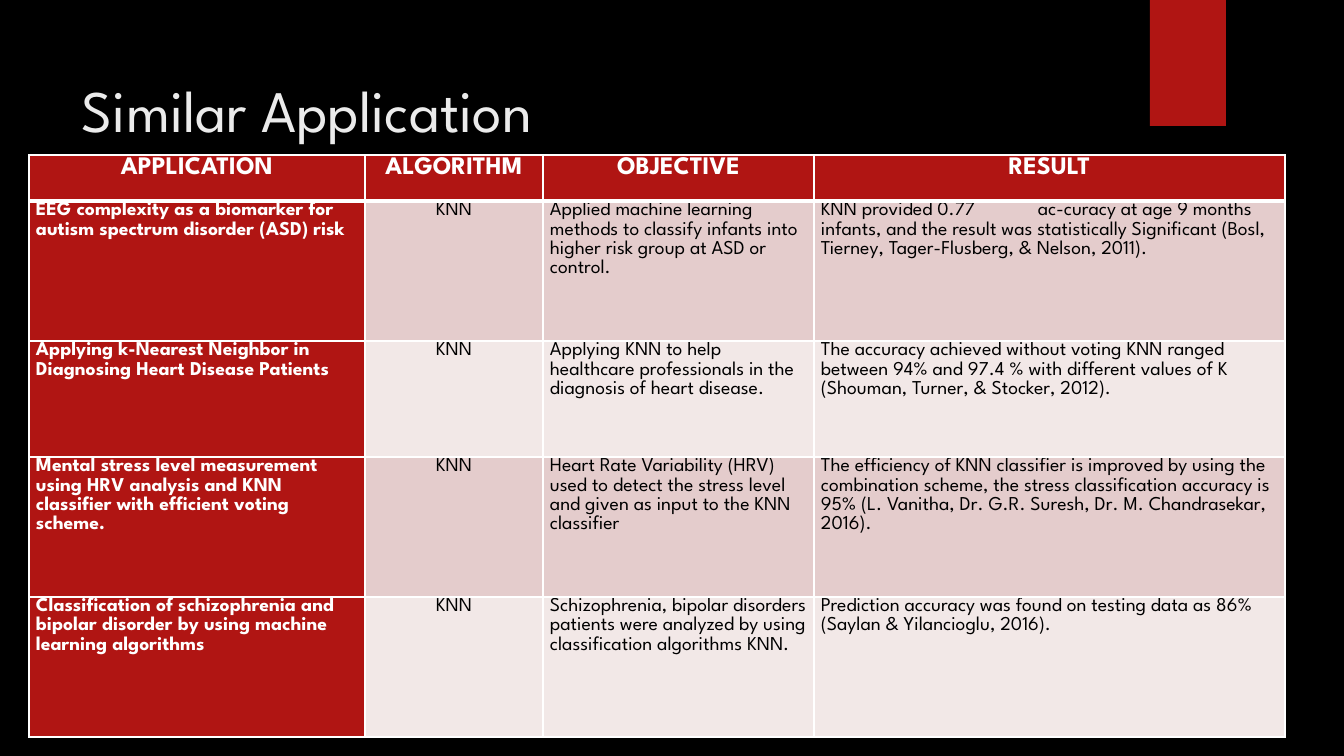
from lxml import etree
from pptx import Presentation
from pptx import util as u
from pptx.dml.color import RGBColor
from pptx.enum import shapes, text
from pptx.oxml import ns

PX = 914400 / 100.8
FONT = "League Spartan"
BLACK = RGBColor(0x00, 0x00, 0x00)
WHITE = RGBColor(0xFF, 0xFF, 0xFF)
RED = RGBColor(0xB0, 0x15, 0x13)
TITLE_GRAY = RGBColor(0xEB, 0xEB, 0xEB)
BAND_DARK = RGBColor(0xE4, 0xCC, 0xCC)
BAND_LIGHT = RGBColor(0xF2, 0xE8, 0xE7)

COLUMN_WIDTHS = [336, 178, 271, 471]
ROW_HEIGHTS = [46, 140, 116, 140, 140]
ROWS = [
    ["APPLICATION", "ALGORITHM", "OBJECTIVE", "RESULT"],
    ["EEG complexity as a biomarker for autism spectrum disorder (ASD) risk",
     "KNN",
     "Applied machine learning methods to classify infants into higher risk group at ASD or control.",
     "KNN provided 0.77\tac-curacy at age 9 months infants, and the result was statistically "
     "Significant (Bosl, Tierney, Tager-Flusberg, & Nelson, 2011)."],
    ["Applying k-Nearest Neighbor in Diagnosing Heart Disease Patients",
     "KNN",
     "Applying KNN to help healthcare professionals in the diagnosis of heart disease.",
     "The accuracy achieved without voting KNN ranged between 94% and 97.4 % with different "
     "values of K (Shouman, Turner, & Stocker, 2012)."],
    ["Mental stress level measurement using HRV analysis and KNN classifier with efficient voting scheme.",
     "KNN",
     "Heart Rate Variability (HRV) used to detect the stress level and given as input to the KNN classifier",
     "The efficiency of KNN classifier is improved by using the combination scheme, the stress "
     "classification accuracy is 95% (L. Vanitha, Dr. G.R. Suresh, Dr. M. Chandrasekar, 2016)."],
    ["Classification of schizophrenia and bipolar disorder by using machine learning algorithms",
     "KNN",
     "Schizophrenia, bipolar disorders patients were analyzed by using classification algorithms KNN.",
     "Prediction accuracy was found on testing data as 86% (Saylan & Yilancioglu, 2016)."],
]


def px(*lengths):
    return [u.Emu(round(length * PX)) for length in lengths]


def write(paragraph, wording, color, **formats):
    run = paragraph.add_run()
    run.text = wording
    run.font.color.rgb = color
    for name, value in {"name": FONT, **formats}.items():
        setattr(run.font, name, value)


presentation = Presentation()
presentation.slide_width, presentation.slide_height = px(1344, 756)
slide = presentation.slides.add_slide(presentation.slide_layouts[5])
slide.background.fill.solid()
slide.background.fill.fore_color.rgb = BLACK

ribbon = slide.shapes.add_shape(shapes.MSO_SHAPE.RECTANGLE, *px(1150, 0, 76, 126))
ribbon.shadow.inherit = False
ribbon.fill.solid()
ribbon.fill.fore_color.rgb = RED
ribbon.line.fill.background()

title = slide.shapes.title
title.left, title.top, title.width, title.height = px(72, 50, 1037, 154)
frame = title.text_frame
frame.margin_top, frame.margin_left = px(24, 10)
frame.vertical_anchor = text.MSO_ANCHOR.TOP
frame.auto_size = text.MSO_AUTO_SIZE.NONE
paragraph = frame.paragraphs[0]
paragraph.alignment = text.PP_ALIGN.LEFT
write(paragraph, "Similar Application", TITLE_GRAY, size=u.Pt(42))

table = slide.shapes.add_table(
    len(ROWS), len(COLUMN_WIDTHS), *px(29, 155, sum(COLUMN_WIDTHS), sum(ROW_HEIGHTS))
).table
for column, width in zip(table.columns, px(*COLUMN_WIDTHS)):
    column.width = width
for row, height in zip(table.rows, px(*ROW_HEIGHTS)):
    row.height = height

for row_index, row in enumerate(ROWS):
    for column_index, wording in enumerate(row):
        cell = table.cell(row_index, column_index)
        is_header = row_index == 0
        is_strong = is_header or column_index == 0
        cell.margin_left, cell.margin_right, cell.margin_top, cell.margin_bottom = px(7, 7, 0, 0)

        paragraph = cell.text_frame.paragraphs[0]
        centered = is_header or column_index == 1
        paragraph.alignment = text.PP_ALIGN.CENTER if centered else text.PP_ALIGN.LEFT
        paragraph.line_spacing = 1.06
        if "\t" in wording:
            properties = paragraph._p.get_or_add_pPr()
            tabs = etree.SubElement(properties, ns.qn("a:tabLst"))
            etree.SubElement(tabs, ns.qn("a:tab"), pos=str(px(217)[0]), algn="l")
        write(paragraph, wording, WHITE if is_strong else BLACK,
              size=u.Pt(18 if is_header else 14), bold=is_strong)

        cell_properties = cell._tc.get_or_add_tcPr()
        for side in "LRTB":
            thick = (side, row_index) in (("B", 0), ("T", 1))
            border = etree.SubElement(cell_properties, ns.qn(f"a:ln{side}"),
                                      w=str(u.Pt(3 if thick else 1)))
            fill = etree.SubElement(border, ns.qn("a:solidFill"))
            etree.SubElement(fill, ns.qn("a:srgbClr"), val=str(WHITE))
        cell.fill.solid()
        band = BAND_DARK if row_index % 2 else BAND_LIGHT
        cell.fill.fore_color.rgb = RED if is_strong else band

presentation.save("out.pptx")
